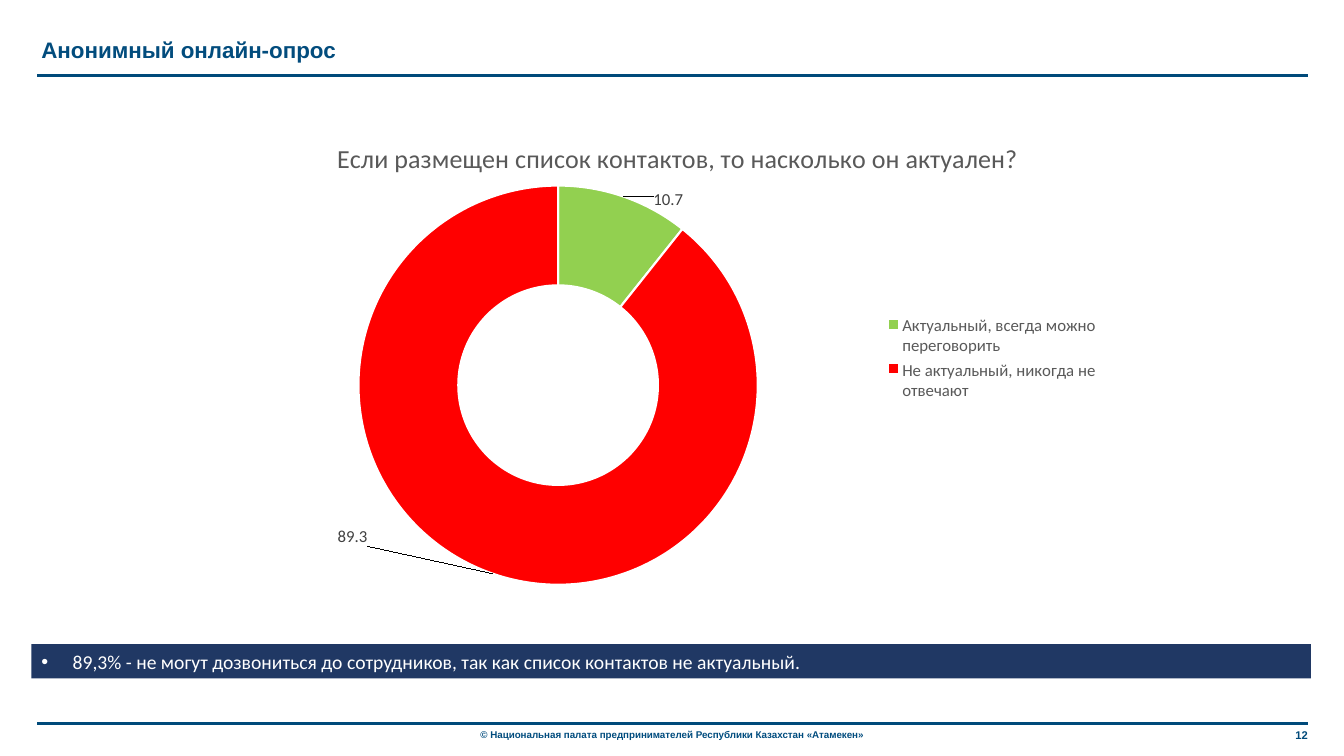
"""Build the survey slide with a doughnut chart about contact lists."""
from lxml import etree
from pptx import Presentation
from pptx.chart.data import CategoryChartData
from pptx.dml.color import RGBColor
from pptx.enum.chart import XL_CHART_TYPE, XL_LEGEND_POSITION
from pptx.enum.shapes import MSO_CONNECTOR
from pptx.enum.text import MSO_ANCHOR, MSO_AUTO_SIZE, PP_ALIGN
from pptx.oxml import parse_xml
from pptx.oxml.ns import nsdecls, qn
from pptx.util import Inches, Pt

DOUGHNUT = XL_CHART_TYPE.DOUGHNUT
LEGEND_RIGHT = XL_LEGEND_POSITION.RIGHT
STRAIGHT = MSO_CONNECTOR.STRAIGHT
MIDDLE = MSO_ANCHOR.MIDDLE
NO_AUTOFIT = MSO_AUTO_SIZE.NONE
LEFT, CENTER, RIGHT = PP_ALIGN.LEFT, PP_ALIGN.CENTER, PP_ALIGN.RIGHT

COLORS = {
    "rule": "004A7A", "title": "024C7D", "copyright": "004C7E",
    "bar": "203864", "white": "FFFFFF", "muted": "595959",
    "label": "404040", "current": "92D050", "outdated": "FF0000",
}

deck = Presentation()
deck.slide_width, deck.slide_height = Inches(13.33), Inches(7.5)
COLUMN, ROW = deck.slide_width / 100, deck.slide_height / 100
page = deck.slides.add_slide(deck.slide_layouts[1])


def style(font, size, color, name="Calibri", bold=False):
    font.size, font.name, font.bold = Pt(size), name, bold
    font.color.rgb = RGBColor.from_string(COLORS[color])


def set_layout(parent, index, modes, **shares):
    for old in parent.findall(qn("c:layout")):
        parent.remove(old)
    layout = parse_xml(f"<c:layout {nsdecls('c')}><c:manualLayout/></c:layout>")
    for tag, value in {**modes, **shares}.items():
        etree.SubElement(layout[0], qn(f"c:{tag}")).set("val", str(value))
    parent.insert(index, layout)


for row in (10, 95.73):
    rule = page.shapes.add_connector(
        STRAIGHT, int(2.78 * COLUMN), int(row * ROW), int(97.3 * COLUMN), int(row * ROW))
    rule.line.color.rgb = RGBColor.from_string(COLORS["rule"])
    rule.line.width = Pt(2.5)
    etree.SubElement(rule._element.spPr, qn("a:effectLst"))

title, bar = page.placeholders
number, rights = [page.shapes.add_textbox(0, 0, 0, 0) for _ in range(2)]
texts = [
    (title, (2.33, 4.13, 65.8, 4.93), "Анонимный онлайн-опрос", LEFT, (16, "title", "Arial", True)),
    (bar, (2.33, 85.2, 95.2, 4.53),
     "89,3% - не могут дозвониться до сотрудников, так как список контактов не актуальный.",
     LEFT, (14, "white")),
    (number, (92.72, 95.73, 5.33, 3.07), "12", RIGHT, (8, "rule", "Arial", True)),
    (rights, (32.41, 95.73, 35.18, 2.93),
     "© Национальная палата предпринимателей Республики Казахстан «Атамекен»",
     CENTER, (7, "copyright", "Arial", True)),
]
for box, (left, top, width, height), text, align, look in texts:
    box.left, box.top = int(left * COLUMN), int(top * ROW)
    box.width, box.height = int(width * COLUMN), int(height * ROW)
    frame = box.text_frame
    frame.text = text
    frame.word_wrap, frame.auto_size, frame.vertical_anchor = True, NO_AUTOFIT, MIDDLE
    para = frame.paragraphs[0]
    para.alignment, para.space_before = align, Pt(0)
    if box is bar:
        properties = para._p.get_or_add_pPr()
        properties.set("marL", str(Inches(0.31)))
        properties.set("indent", str(-Inches(0.31)))
        etree.SubElement(properties, qn("a:buFont")).set("typeface", "Arial")
        etree.SubElement(properties, qn("a:buChar")).set("char", "•")
    style(para.font, *look)
bar.fill.solid()
bar.fill.fore_color.rgb = RGBColor.from_string(COLORS["bar"])

answers = CategoryChartData()
answers.categories = ["Актуальный, всегда можно переговорить", "Не актуальный, никогда не отвечают"]
answers.add_series("Series 1", (10.7, 89.3))
chart = page.shapes.add_chart(
    DOUGHNUT, int(17.63 * COLUMN), int(14.67 * ROW),
    int(64.59 * COLUMN), int(64.8 * ROW), answers).chart
style(chart.font, 10, "label")

EDGE = {"xMode": "edge", "yMode": "edge"}
chart.has_title = True
heading = chart.chart_title.text_frame
heading.text = "Если размещен список контактов, то насколько он актуален?"
style(heading.paragraphs[0].font, 18.6, "muted")
set_layout(chart.chart_title._element, 1, EDGE, x=0.11, y=0.05)

chart.has_legend = True
legend = chart.legend
legend.position, legend.include_in_layout = LEGEND_RIGHT, False
style(legend.font, 12, "muted")
set_layout(legend._element, 1, EDGE, x=0.74, y=0.41, w=0.26, h=0.19)
plot_area = chart._chartSpace.chart.plotArea
set_layout(plot_area, 0, {"layoutTarget": "inner", **EDGE}, x=0.14, y=0.15, w=0.46, h=0.82)

ring = chart.plots[0].series[0]
labels = ring.data_labels
labels.show_value = True
style(labels.font, 12, "label")
for index, (color, x, y) in enumerate([("current", 0.07, -0.09), ("outdated", -0.18, 0.02)]):
    point = ring.points[index]
    point.format.fill.solid()
    point.format.fill.fore_color.rgb = RGBColor.from_string(COLORS[color])
    point.format.line.color.rgb = RGBColor.from_string(COLORS["white"])
    point.format.line.width = Pt(1.5)
    style(point.data_label.font, 12, "label")
    set_layout(labels._element.findall(qn("c:dLbl"))[index], 1, {}, x=x, y=y)

deck.save("out.pptx")
